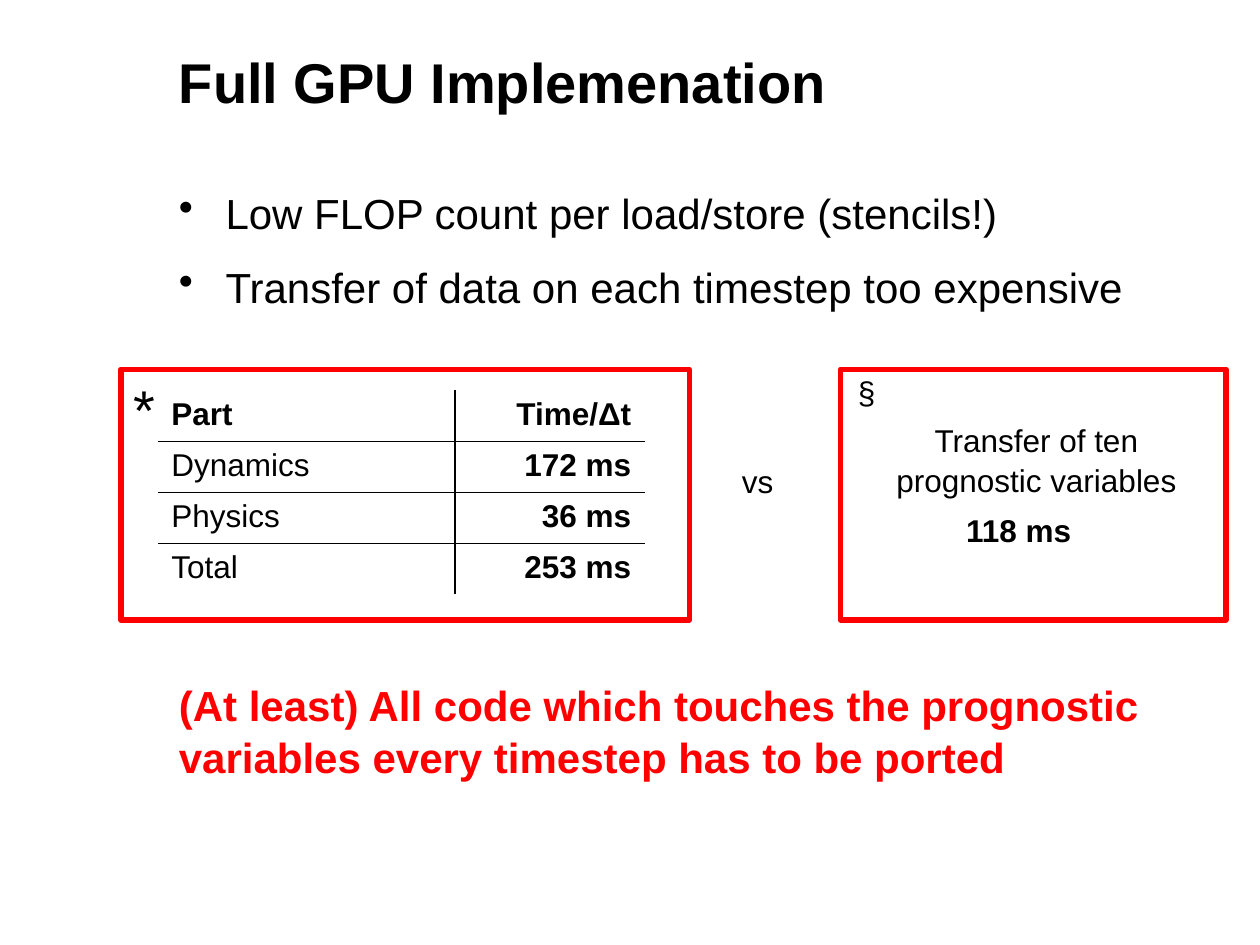
from pptx import Presentation
from pptx.dml.color import RGBColor
from pptx.enum.shapes import MSO_SHAPE
from pptx.enum.text import PP_ALIGN
from pptx.oxml import parse_xml
from pptx.oxml.ns import nsdecls
from pptx.util import Inches, Pt

RECT = MSO_SHAPE.RECTANGLE
LEFT, MID, RIGHT = PP_ALIGN.LEFT, PP_ALIGN.CENTER, PP_ALIGN.RIGHT
BLACK, RED = "000000", "FF0000"
COLS, ROWS = 100, 75


def color(code):
    return RGBColor.from_string(code)


def write(para, text, size=18, bold=False, ink=BLACK, align=LEFT,
          line=1.05, before=0, bullet=None):
    """Put text into a paragraph and format it."""
    if bullet:
        props = para._p.get_or_add_pPr()
        props.set("marL", str(Inches(0.37)))
        props.set("indent", str(-Inches(0.37)))
        props.append(parse_xml(f'<a:buChar {nsdecls("a")} char="{bullet}"/>'))
    para.text = text
    para.alignment = align
    para.line_spacing = line
    para.space_before = Pt(before)
    font = para.font
    font.name, font.size, font.bold = "Arial", Pt(size), bold
    font.color.rgb = color(ink)


class Page:
    """Current slide on a grid of COLS by ROWS."""

    def __init__(self, deck):
        self.slide = deck.slides.add_slide(deck.slide_layouts[6])
        self.unit_x = deck.slide_width / COLS
        self.unit_y = deck.slide_height / ROWS

    def area(self, x, y, wide, high):
        return (round(x * self.unit_x), round(y * self.unit_y),
                round(wide * self.unit_x), round(high * self.unit_y))

    def text(self, box, *lines, pad=0, wrap=True, gap=0, **style):
        frame = self.slide.shapes.add_textbox(*self.area(*box)).text_frame
        frame.word_wrap = wrap
        frame.margin_left = frame.margin_right = Inches(pad)
        frame.margin_top = frame.margin_bottom = Inches(pad / 2)
        for i, line in enumerate(lines):
            para = frame.add_paragraph() if i else frame.paragraphs[0]
            write(para, line, before=gap if i else 0, **style)

    def label(self, box, text, **style):
        self.text(box, text, pad=0.1, wrap=False, **style)

    def frame(self, box):
        shape = self.slide.shapes.add_shape(RECT, *self.area(*box))
        shape.shadow.inherit = False
        shape.fill.background()
        shape.line.color.rgb = color(RED)
        shape.line.width = Pt(3)

    def edge(self, cell, side):
        cell._tc.get_or_add_tcPr().append(parse_xml(
            f'<a:ln{side} {nsdecls("a")} w="{Pt(1)}"><a:solidFill>'
            f'<a:srgbClr val="{BLACK}"/></a:solidFill></a:ln{side}>'))

    def table(self, box, widths, rows):
        last = len(rows) - 1
        grid = self.slide.shapes.add_table(
            len(rows), len(widths), *self.area(*box)).table
        grid.first_row = grid.horz_banding = False
        for col, wide in zip(grid.columns, widths):
            col.width = round(wide * self.unit_x)
        for r, row in enumerate(rows):
            for c, text in enumerate(row):
                cell = grid.cell(r, c)
                # Inner rules only, in the order L, R, T, B
                self.edge(cell, "L" if c else "R")
                if r > 0:
                    self.edge(cell, "T")
                if r < last:
                    self.edge(cell, "B")
                cell.fill.background()
                write(cell.text_frame.paragraphs[0], text, line=1,
                      bold=r == 0 or c == 1, align=RIGHT if c else LEFT)


def main():
    deck = Presentation()
    deck.slide_width, deck.slide_height = Inches(10), Inches(7.5)
    page = Page(deck)

    # Title and points
    page.text((14.2, 3.5, 81.6, 10.8), "Full GPU Implemenation",
              size=32, bold=True)
    page.text((14.2, 14.7, 81.7, 12),
              "Low FLOP count per load/store (stencils!)",
              "Transfer of data on each timestep too expensive",
              size=24, bullet="•", gap=12)

    # Time spent in each part
    page.table((12.6, 31, 38.5, 16.2), (23.5, 15), (
        ("Part", "Time/Δt"),
        ("Dynamics", "172 ms"),
        ("Physics", "36 ms"),
        ("Total", "253 ms"),
    ))

    # Cost of the transfer
    page.label((57.9, 36, 5.8, 5.1), "vs")
    page.label((75.7, 39.9, 10.4, 4), "118 ms", bold=True)
    page.label((70, 32.8, 24.5, 7.1),
               "Transfer of ten\vprognostic variables", align=MID)

    # Red frames with their marks
    for x, wide in ((9.6, 45.1), (66.7, 30.6)):
        page.frame((x, 29.3, wide, 19.9))
    page.label((9.6, 29, 3.8, 6.4), "*", size=32)
    page.label((67.1, 29, 3.9, 5.1), "§")

    # Conclusion
    page.text((14.2, 53.7, 81.7, 10),
              "(At least) All code which touches the prognostic variables "
              "every timestep has to be ported",
              size=24, bold=True, ink=RED)

    deck.save("out.pptx")


if __name__ == "__main__":
    main()
